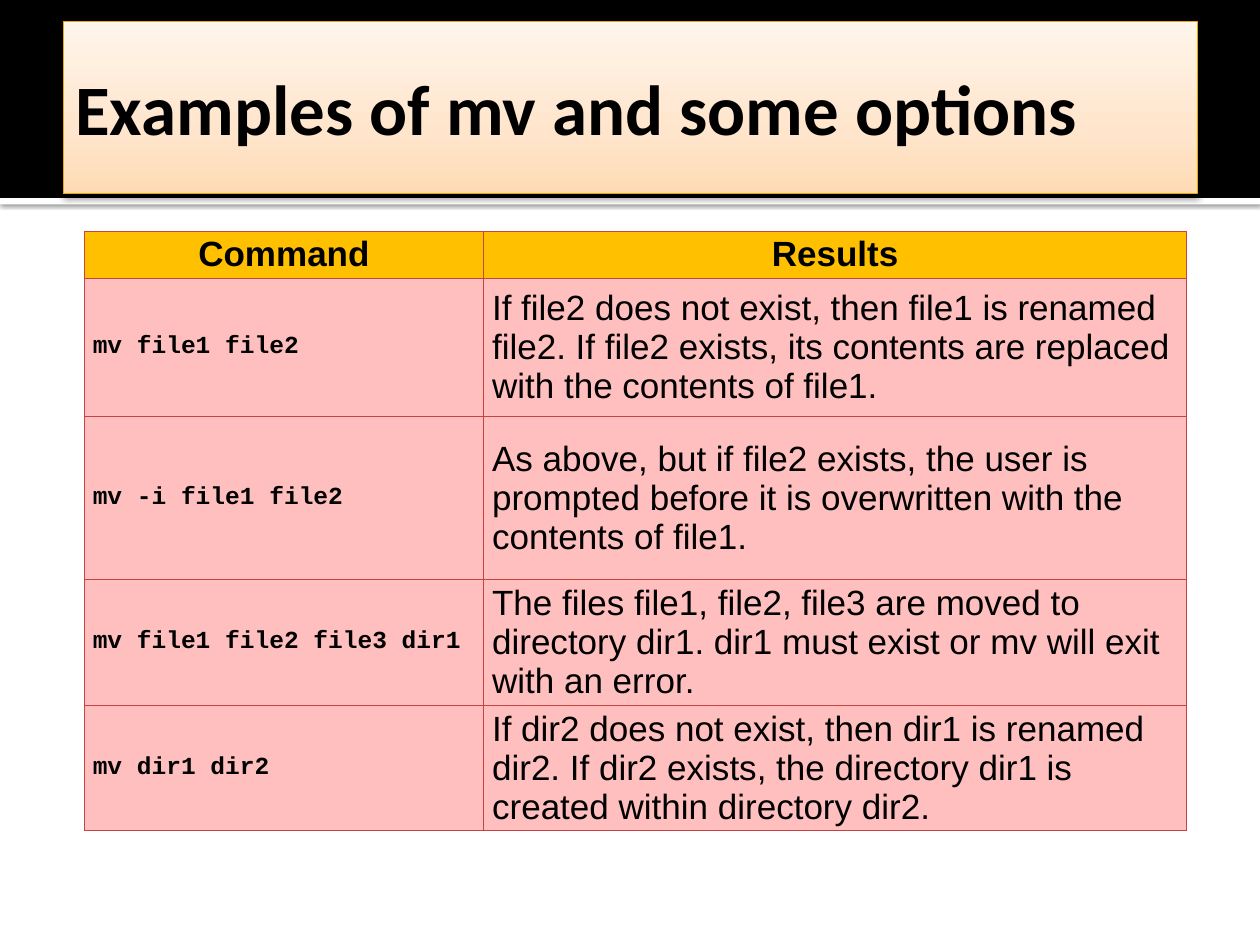
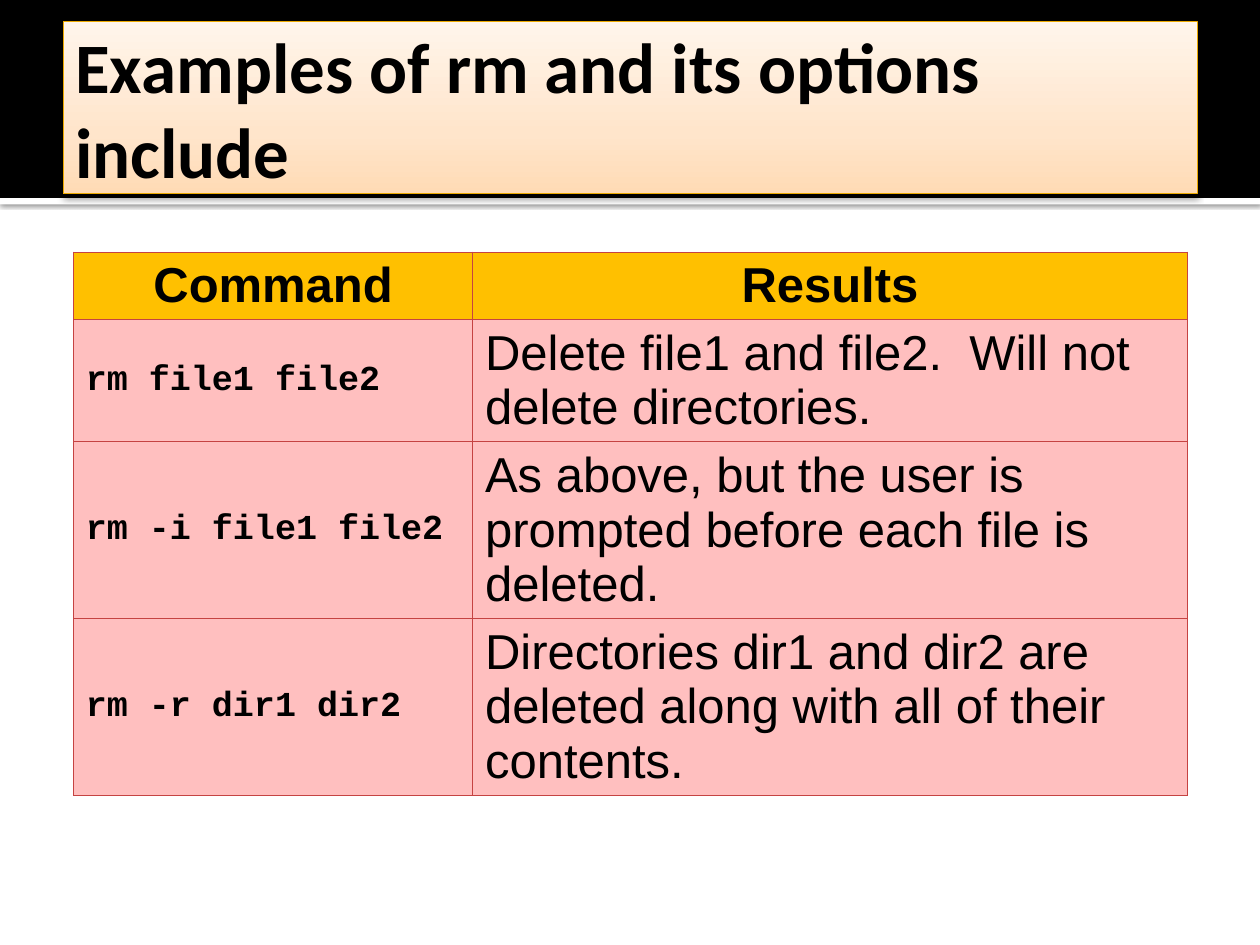
import copy

import pptx
import pptx.dml.color
import pptx.enum.shapes
import pptx.enum.text
import pptx.oxml
import pptx.oxml.ns
import pptx.util
from pptx.util import Cm, Pt

HUES = {
    "ink": "000000",
    "paper": "FFFFFF",
    "head": "FFC000",
    "body": "FFBFBF",
    "grid": "C54342",
    "edge": "EBA900",
}
FADE = [(0, "FFDBB5"), (0.35, "FFE5CB"), (1, "FFF5EB")]
ALIGN = pptx.enum.text.PP_ALIGN
MIDDLE = pptx.enum.text.MSO_ANCHOR.MIDDLE
WIDE, HIGH = Cm(25.4), Cm(19.05)
NS = pptx.oxml.ns.nsdecls("a")

MOVES = [
    ("mv file1 file2",
     "If file2 does not exist, then file1 is renamed file2. "
     "If file2 exists, its contents are replaced with the contents of file1."),
    ("mv -i file1 file2",
     "As above, but if file2 exists, the user is prompted before it is "
     "overwritten with the contents of file1."),
    ("mv file1 file2 file3 dir1",
     "The files file1, file2, file3 are moved to directory dir1. "
     "dir1 must exist or mv will exit with an error."),
    ("mv dir1 dir2",
     "If dir2 does not exist, then dir1 is renamed dir2. "
     "If dir2 exists, the directory dir1 is created within directory dir2."),
]
ERASES = [
    ("rm file1 file2",
     "Delete file1 and file2.  Will not delete directories."),
    ("rm -i file1 file2",
     "As above, but the user is prompted before each file is deleted."),
    ("rm -r dir1 dir2",
     "Directories dir1 and dir2 are deleted along with all of their contents."),
]


def rgb(code):
    return pptx.dml.color.RGBColor.from_string(code)


def write(frame, text, size, font="Arial", bold=False, align=ALIGN.LEFT):
    """Fill a text frame with one formatted paragraph."""
    para = frame.paragraphs[0]
    para.alignment = align
    run = para.add_run()
    run.text = text
    run.font.size = Pt(size)
    run.font.name = font
    run.font.bold = bold
    run.font.color.rgb = rgb(HUES["ink"])


def shade(shape, alpha, blur, dist):
    """Give a shape a black shadow that falls straight down."""
    shape.shadow.inherit = False
    effects = shape._element.spPr.find(pptx.oxml.ns.qn("a:effectLst"))
    effects.append(pptx.oxml.parse_xml(
        f'<a:outerShdw {NS} blurRad="{Pt(blur)}" dist="{Pt(dist)}" '
        f'dir="5400000" algn="t" rotWithShape="0">'
        f'<a:srgbClr val="{HUES["ink"]}"><a:alpha val="{alpha * 1000}"/>'
        f'</a:srgbClr></a:outerShdw>'))


def fade(fill):
    """Run the title gradient from bottom to top."""
    fill.gradient()
    fill.gradient_angle = 90
    first = fill.gradient_stops[0]._gs
    first.addnext(copy.deepcopy(first))
    for stop, (place, code) in zip(fill.gradient_stops, FADE):
        stop.position = place
        stop.color.rgb = rgb(code)


def frame_cell(cell):
    """Draw the four thin borders of a cell."""
    props = cell._tc.get_or_add_tcPr()
    for side in "LRTB":
        props.append(pptx.oxml.parse_xml(
            f'<a:ln{side} {NS} w="{Pt(0.5)}"><a:solidFill>'
            f'<a:srgbClr val="{HUES["grid"]}"/></a:solidFill></a:ln{side}>'))


class Deck:
    def __init__(self):
        self.show = pptx.Presentation()
        self.show.slide_width, self.show.slide_height = WIDE, HIGH
        self.slide = None

    def start(self, title):
        """Add a slide with its bands and title."""
        layout = self.show.slide_layouts.get_by_name("Title Only")
        self.slide = self.show.slides.add_slide(layout)
        self.band(0, 3.99, "ink")
        shade(self.band(3.99, 0.13, "paper"), 60, 2.5, 0.8)
        self.title(title)

    def band(self, top, height, hue):
        """Add a full-width strip behind all that is on the slide."""
        strip = self.slide.shapes.add_shape(
            pptx.enum.shapes.MSO_SHAPE.RECTANGLE, 0, Cm(top), WIDE, Cm(height))
        strip.shadow.inherit = False
        strip.fill.solid()
        strip.fill.fore_color.rgb = rgb(HUES[hue])
        strip.line.fill.background()
        self.slide.shapes._spTree.insert(2, strip._element)
        return strip

    def title(self, text):
        box = self.slide.shapes.title
        box.left, box.top = Cm(1.27), Cm(0.43)
        box.width, box.height = Cm(22.86), Cm(3.48)
        fade(box.fill)
        box.line.color.rgb = rgb(HUES["edge"])
        box.line.width = Pt(0.5)
        shade(box, 38, 3.5, 2)
        frame = box.text_frame
        frame.word_wrap = True
        frame.auto_size = pptx.enum.text.MSO_AUTO_SIZE.NONE
        frame.vertical_anchor = MIDDLE
        frame.margin_left = Cm(0.25)
        frame.margin_right = frame.margin_top = frame.margin_bottom = Cm(0.13)
        write(frame, text, 40.5, font="Calibri", bold=True)

    def table(self, rows, left, top, cols, heights, size, code, pad):
        """Add a command table; pad holds the side and top cell margins."""
        grid = self.slide.shapes.add_table(
            len(rows) + 1, len(cols), Cm(left), Cm(top),
            Cm(sum(cols)), Cm(sum(heights))).table
        grid.horz_banding = False
        for col, width in zip(grid.columns, cols):
            col.width = Cm(width)
        for row, height in zip(grid.rows, heights):
            row.height = Cm(height)
        head = dict(size=size, bold=True, align=ALIGN.CENTER)
        for col, text in enumerate(("Command", "Results")):
            self.cell(grid.cell(0, col), text, "head", pad, **head)
        for num, (command, result) in enumerate(rows, 1):
            self.cell(grid.cell(num, 0), command, "body", pad,
                      size=code, font="Courier New", bold=True)
            self.cell(grid.cell(num, 1), result, "body", pad, size=size)

    def cell(self, cell, text, hue, pad, **look):
        frame_cell(cell)
        cell.fill.solid()
        cell.fill.fore_color.rgb = rgb(HUES[hue])
        cell.vertical_anchor = MIDDLE
        cell.margin_left = cell.margin_right = Cm(pad[0])
        cell.margin_top = cell.margin_bottom = Cm(pad[1])
        write(cell.text_frame, text, **look)


def main():
    deck = Deck()
    deck.start("Examples of mv and some options")
    deck.table(MOVES, 1.7, 4.66, (8.05, 14.17), (0.94, 2.78, 3.3, 2.53, 2.53),
               size=20, code=14, pad=(0.17, 0.08))
    deck.start("Examples of rm and its options include")
    deck.table(ERASES, 1.48, 5.08, (8.05, 14.4), (1.35, 2.46, 3.56, 3.56),
               size=28, code=20, pad=(0.25, 0.13))
    deck.show.save("out.pptx")


if __name__ == "__main__":
    main()
